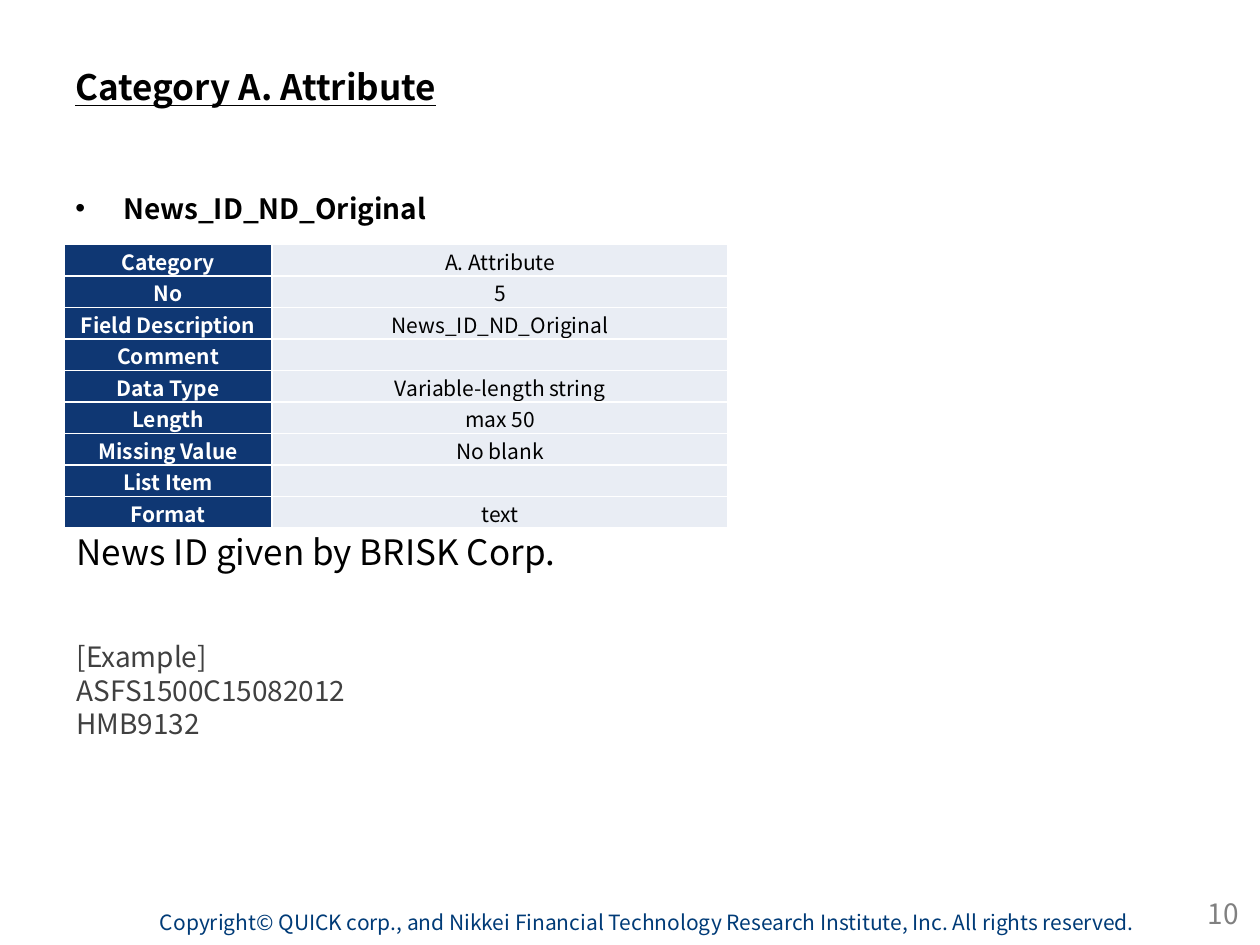
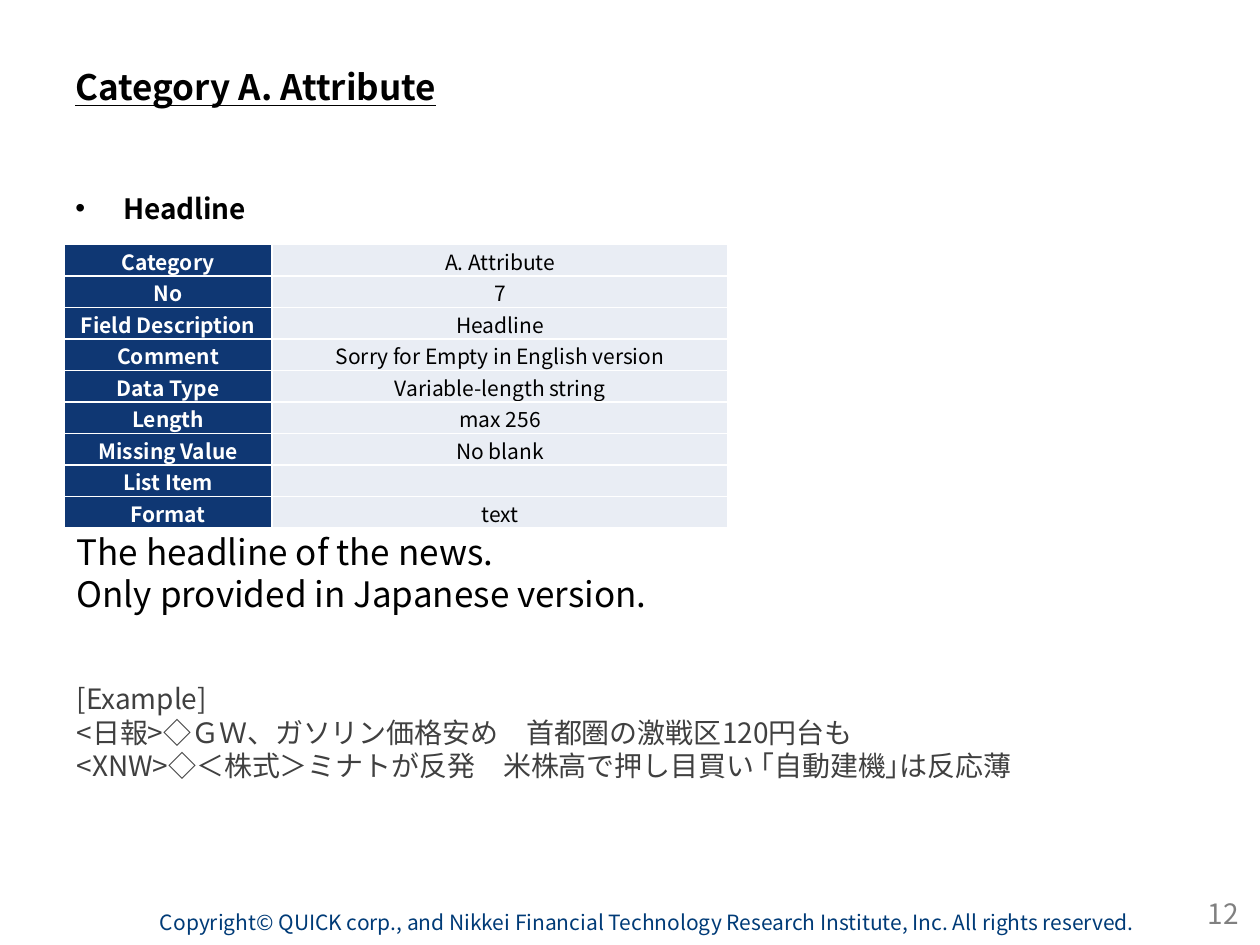
from dataclasses import dataclass

from lxml import etree
from pptx import Presentation
from pptx.dml.color import RGBColor
from pptx.enum import shapes, text
from pptx.oxml import ns
from pptx.util import Inches, Pt

FONT = "Noto Sans CJK JP"
BLACK = RGBColor(0x00, 0x00, 0x00)
WHITE = RGBColor(0xFF, 0xFF, 0xFF)
NAVY = RGBColor(0x0F, 0x37, 0x73)
PALE_BLUE = RGBColor(0xE9, 0xED, 0xF4)
FOOTER_BLUE = RGBColor(0x00, 0x3B, 0x77)
GREY = RGBColor(0x80, 0x80, 0x80)
DARK_GREY = RGBColor(0x40, 0x40, 0x40)

TITLE = "Category A. Attribute"
COPYRIGHT = (
    "Copyright© QUICK corp., and Nikkei Financial Technology Research "
    "Institute, Inc. All rights reserved."
)
FIELD_LABELS = (
    "Category", "No", "Field Description", "Comment", "Data Type",
    "Length", "Missing Value", "List Item", "Format",
)
COLUMN_WIDTHS = (1.65, 3.62)
ROW_HEIGHT = 0.25
EXAMPLE_GAP = Pt(38.4)


@dataclass(frozen=True)
class Style:
    size: int
    color: RGBColor
    bold: bool = False
    underline: bool = False


@dataclass(frozen=True)
class Box:
    left: float
    top: float
    width: float
    height: float

    def lengths(self) -> tuple:
        return tuple(Inches(n) for n in (self.left, self.top, self.width, self.height))


@dataclass(frozen=True)
class FieldPage:
    number: int
    field_number: int
    name: str
    comment: str
    length: str
    description: tuple[str, ...]
    examples: tuple[str, ...]

    def values(self) -> tuple[str, ...]:
        return (
            "A. Attribute", str(self.field_number), self.name, self.comment,
            "Variable-length string", self.length, "No blank", "", "text",
        )


TITLE_STYLE = Style(20, BLACK, bold=True, underline=True)
HEADING_STYLE = Style(16, BLACK, bold=True)
LABEL_STYLE = Style(12, WHITE, bold=True)
VALUE_STYLE = Style(12, BLACK)
DESCRIPTION_STYLE = Style(20, BLACK)
EXAMPLE_STYLE = Style(16, DARK_GREY)
NUMBER_STYLE = Style(16, GREY)
FOOTER_STYLE = Style(12, FOOTER_BLUE)

TITLE_BOX = Box(0.5, 0.3, 9, 0.77)
HEADING_BOX = Box(0.5, 1.47, 9, 0.4)
TABLE_BOX = Box(0.51, 1.94, sum(COLUMN_WIDTHS), ROW_HEIGHT * len(FIELD_LABELS))
DESCRIPTION_BOX = Box(0.51, 4.16, 8.98, 2.12)
NUMBER_BOX = Box(7.6, 7.05, 2.33, 0.4)
FOOTER_BOX = Box(1.27, 7.22, 7.86, 0.2)

PAGES = (
    FieldPage(
        10, 5, "News_ID_ND_Original", "", "max 50",
        ("News ID given by BRISK Corp.",),
        ("ASFS1500C15082012", "HMB9132"),
    ),
    FieldPage(
        12, 7, "Headline", "Sorry for Empty in English version", "max 256",
        ("The headline of the news.", "Only provided in Japanese version."),
        (
            "<日報>◇ＧＷ、ガソリン価格安め　首都圏の激戦区120円台も",
            "<XNW>◇＜株式＞ミナトが反発　米株高で押し目買い ｢自動建機｣は反応薄",
        ),
    ),
)


def write(paragraph, content: str, style: Style) -> None:
    paragraph.text = content
    for run in paragraph.runs:
        run.font.size = Pt(style.size)
        run.font.bold = style.bold
        run.font.underline = style.underline
        run.font.color.rgb = style.color
        run.font.name = FONT
        etree.SubElement(run.font._element, ns.qn("a:ea"), typeface=FONT)


def add_text(slide, box: Box, content: str, style: Style, anchor=text.MSO_ANCHOR.TOP):
    text_frame = slide.shapes.add_textbox(*box.lengths()).text_frame
    text_frame.word_wrap = True
    text_frame.vertical_anchor = anchor
    write(text_frame.paragraphs[0], content, style)
    return text_frame


def add_footer(slide) -> None:
    shape = slide.shapes.add_shape(shapes.MSO_SHAPE.RECTANGLE, *FOOTER_BOX.lengths())
    shape.shadow.inherit = False
    shape.fill.solid()
    shape.fill.fore_color.rgb = WHITE
    shape.line.fill.background()
    text_frame = shape.text_frame
    text_frame.word_wrap = True
    text_frame.vertical_anchor = text.MSO_ANCHOR.TOP
    text_frame.margin_left = text_frame.margin_right = 0
    text_frame.margin_top = text_frame.margin_bottom = 0
    write(text_frame.paragraphs[0], COPYRIGHT, FOOTER_STYLE)
    text_frame.paragraphs[0].alignment = text.PP_ALIGN.LEFT


def add_heading(slide, name: str) -> None:
    paragraph = add_text(slide, HEADING_BOX, name, HEADING_STYLE).paragraphs[0]
    properties = paragraph._p.get_or_add_pPr()
    indent = Inches(0.38)
    properties.set("marL", str(indent))
    properties.set("indent", str(-indent))
    etree.SubElement(properties, ns.qn("a:buFont"), typeface="Arial")
    etree.SubElement(properties, ns.qn("a:buChar"), char="•")


def add_borders(cell) -> None:
    properties = cell._tc.get_or_add_tcPr()
    for position, side in enumerate(("lnL", "lnR", "lnT", "lnB")):
        line = etree.Element(ns.qn(f"a:{side}"), w=str(Pt(1)))
        fill = etree.SubElement(line, ns.qn("a:solidFill"))
        etree.SubElement(fill, ns.qn("a:srgbClr"), val=str(WHITE))
        properties.insert(position, line)


def fill_cell(cell, content: str, style: Style, background: RGBColor) -> None:
    cell.fill.solid()
    cell.fill.fore_color.rgb = background
    cell.vertical_anchor = text.MSO_ANCHOR.MIDDLE
    cell.margin_left = cell.margin_right = cell.margin_top = Inches(0.01)
    cell.margin_bottom = 0
    paragraph = cell.text_frame.paragraphs[0]
    write(paragraph, content, style)
    paragraph.alignment = text.PP_ALIGN.CENTER
    etree.SubElement(paragraph._p, ns.qn("a:endParaRPr"), sz=str(style.size * 100))
    add_borders(cell)


def add_field_table(slide, page: FieldPage) -> None:
    frame = slide.shapes.add_table(
        len(FIELD_LABELS), len(COLUMN_WIDTHS), *TABLE_BOX.lengths()
    )
    table = frame.table
    table.first_row = table.horz_banding = False
    for column, width in zip(table.columns, COLUMN_WIDTHS):
        column.width = Inches(width)
    for row, label, value in zip(table.rows, FIELD_LABELS, page.values()):
        row.height = Inches(ROW_HEIGHT)
        fill_cell(row.cells[0], label, LABEL_STYLE, NAVY)
        fill_cell(row.cells[1], value, VALUE_STYLE, PALE_BLUE)


def add_description(slide, page: FieldPage) -> None:
    first, *rest = page.description
    text_frame = add_text(slide, DESCRIPTION_BOX, first, DESCRIPTION_STYLE)
    for line in rest:
        write(text_frame.add_paragraph(), line, DESCRIPTION_STYLE)
    label = text_frame.add_paragraph()
    write(label, "[Example]", EXAMPLE_STYLE)
    label.space_before = EXAMPLE_GAP
    for example in page.examples:
        write(text_frame.add_paragraph(), example, EXAMPLE_STYLE)


def add_page(presentation, page: FieldPage) -> None:
    slide = presentation.slides.add_slide(presentation.slide_layouts[6])
    middle = text.MSO_ANCHOR.MIDDLE
    add_footer(slide)
    add_text(slide, TITLE_BOX, TITLE, TITLE_STYLE, middle)
    add_heading(slide, page.name)
    add_field_table(slide, page)
    number = add_text(slide, NUMBER_BOX, str(page.number), NUMBER_STYLE, middle)
    number.paragraphs[0].alignment = text.PP_ALIGN.RIGHT
    add_description(slide, page)


def main() -> None:
    presentation = Presentation()
    presentation.slide_width = Inches(10)
    presentation.slide_height = Inches(7.5)
    for page in PAGES:
        add_page(presentation, page)
    presentation.save("out.pptx")


if __name__ == "__main__":
    main()
